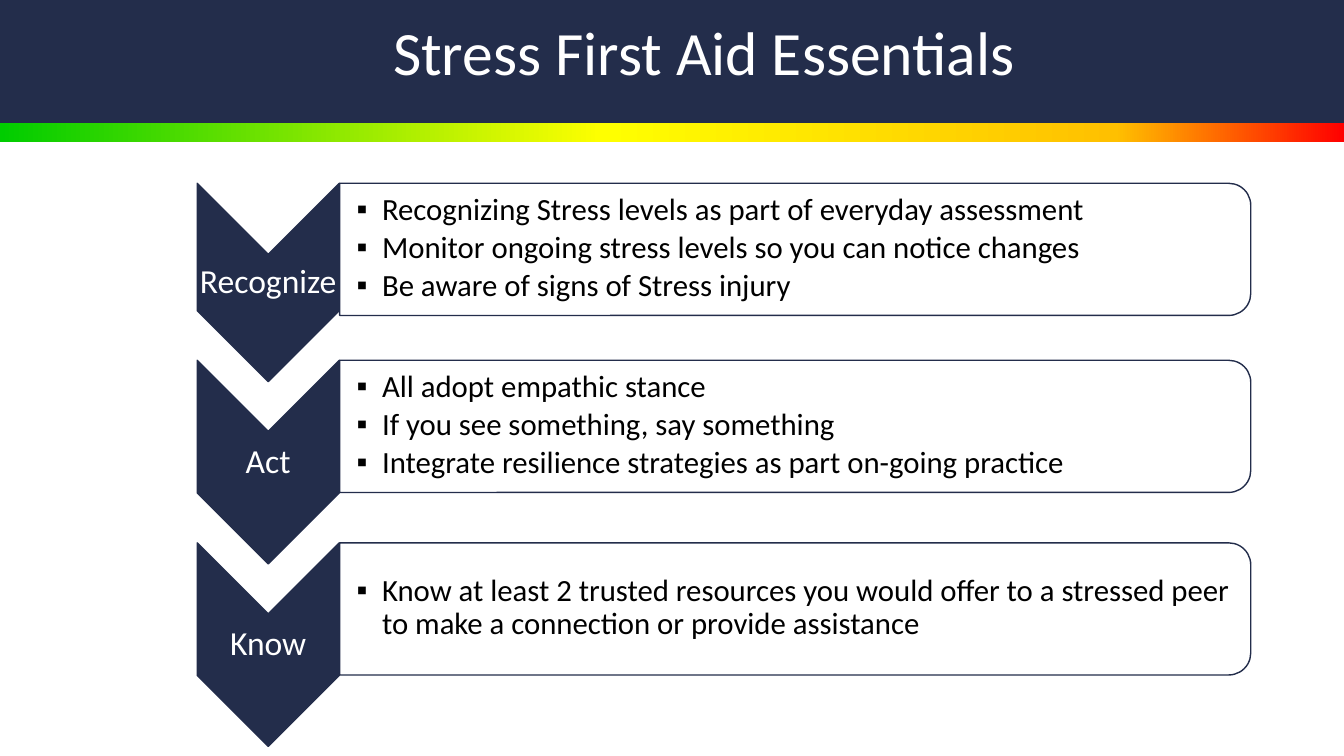
from lxml import etree
from pptx import Presentation
from pptx import util as u
from pptx.dml.color import RGBColor
from pptx.enum import shapes, text
from pptx.oxml.ns import qn

NAVY = RGBColor(0x23, 0x2D, 0x4B)
WHITE = RGBColor(0xFF, 0xFF, 0xFF)
BLACK = RGBColor(0, 0, 0)
GREEN = RGBColor(0, 0xCC, 0)
YELLOW = RGBColor(0xFF, 0xFF, 0)
AMBER = RGBColor(0xFF, 0xC0, 0)
RED = RGBColor(0xFF, 0, 0)

FONT = "Calibri"
WIDE, HIGH = 33.87, 19.05
LEFT, ARROW = 4.97, 3.58
BODY, SPAN, DEEP = 8.56, 22.96, 3.33

STEPS = [
    (4.62, 5.0, "Recognize", [
        "Recognizing Stress levels as part of everyday assessment",
        "Monitor ongoing stress levels so you can notice changes",
        "Be aware of signs of Stress injury",
    ]),
    (9.08, 5.13, "Act", [
        "All adopt empathic stance",
        "If you see something, say something",
        "Integrate resilience strategies as part on-going practice",
    ]),
    (13.68, 5.13, "Know", [
        "Know at least 2 trusted resources you would offer to a stressed peer "
        "to make a connection or provide assistance",
    ]),
]


def add_box(slide, kind, x, y, w, h, fill, line=None):
    box = slide.shapes.add_shape(kind, u.Cm(x), u.Cm(y), u.Cm(w), u.Cm(h))
    box.shadow.inherit = False
    box.fill.solid()
    box.fill.fore_color.rgb = fill
    if line is None:
        box.line.fill.background()
    else:
        box.line.color.rgb = line
        box.line.width = u.Pt(1)
    return box


def add_turned(slide, kind, x, y, w, h, fill):
    shift = (w - h) / 2
    box = add_box(slide, kind, x + shift, y - shift, h, w, fill, NAVY)
    box.rotation = 90
    return box


def add_blend(slide, y, h, stops):
    bar = add_box(slide, shapes.MSO_SHAPE.RECTANGLE, 0, y, WIDE, h, WHITE)
    bar.fill.gradient()
    bar.fill.gradient_angle = 0
    group = bar.element.spPr.find(qn("a:gradFill")).find(qn("a:gsLst"))
    for old in list(group):
        group.remove(old)
    for spot, color in stops:
        stop = etree.SubElement(group, qn("a:gs"), pos=str(spot * 1000))
        etree.SubElement(stop, qn("a:srgbClr"), val=str(color))


def style(para, size, color):
    para.line_spacing = 0.9
    for run in para.runs:
        run.font.name = FONT
        run.font.size = u.Pt(size)
        run.font.color.rgb = color


def add_text(slide, x, y, w, h, words, inset):
    frame = slide.shapes.add_textbox(u.Cm(x), u.Cm(y), u.Cm(w), u.Cm(h)).text_frame
    frame.word_wrap = True
    frame.vertical_anchor = text.MSO_ANCHOR.MIDDLE
    frame.margin_left = u.Cm(inset)
    frame.margin_right = frame.margin_top = frame.margin_bottom = u.Cm(0.05)
    frame.text = words
    return frame.paragraphs


def add_dot(para):
    props = para._p.get_or_add_pPr()
    props.set("marL", str(u.Cm(0.64)))
    props.set("indent", str(-u.Cm(0.64)))
    etree.SubElement(props, qn("a:buFont"), typeface="Arial")
    etree.SubElement(props, qn("a:buChar"), char="▪")


def add_step(slide, top, size, name, points):
    add_turned(slide, shapes.MSO_SHAPE.CHEVRON, LEFT, top, ARROW, size, NAVY)
    label = add_text(slide, LEFT, top + ARROW / 2, ARROW, size - ARROW, name, 0.05)[0]
    label.alignment = text.PP_ALIGN.CENTER
    style(label, 24, WHITE)

    panel = add_turned(slide, shapes.MSO_SHAPE.ROUND_2_SAME_RECTANGLE,
                       BODY, top, SPAN, DEEP, WHITE)
    color = panel.element.spPr.find(qn("a:solidFill"))[0]
    etree.SubElement(color, qn("a:alpha"), val="90000")
    for para in add_text(slide, BODY, top + 0.15, SPAN - 0.15, 3, "\n".join(points), 0.43):
        add_dot(para)
        para.space_after = u.Pt(3.3)
        style(para, 22, BLACK)


def set_title(slide, words):
    title = slide.shapes.title
    title.left, title.top = u.Cm(9.65), u.Cm(0)
    title.width, title.height = u.Cm(16.71), u.Cm(2.79)
    frame = title.text_frame
    frame.text = words
    frame.word_wrap = True
    frame.auto_size = text.MSO_AUTO_SIZE.NONE
    frame.vertical_anchor = text.MSO_ANCHOR.MIDDLE
    para = frame.paragraphs[0]
    para.alignment = text.PP_ALIGN.LEFT
    style(para, 44, WHITE)
    title.element.getparent().append(title.element)


def main():
    deck = Presentation()
    deck.slide_width, deck.slide_height = u.Cm(WIDE), u.Cm(HIGH)
    slide = deck.slides.add_slide(deck.slide_layouts[5])
    add_blend(slide, 3.1, 0.48, [(0, GREEN), (45, YELLOW), (83, AMBER), (100, RED)])
    add_box(slide, shapes.MSO_SHAPE.RECTANGLE, 0, 0, WIDE, 3.1, NAVY)
    set_title(slide, "Stress First Aid Essentials")
    for step in STEPS:
        add_step(slide, *step)
    deck.save("out.pptx")


if __name__ == "__main__":
    main()
